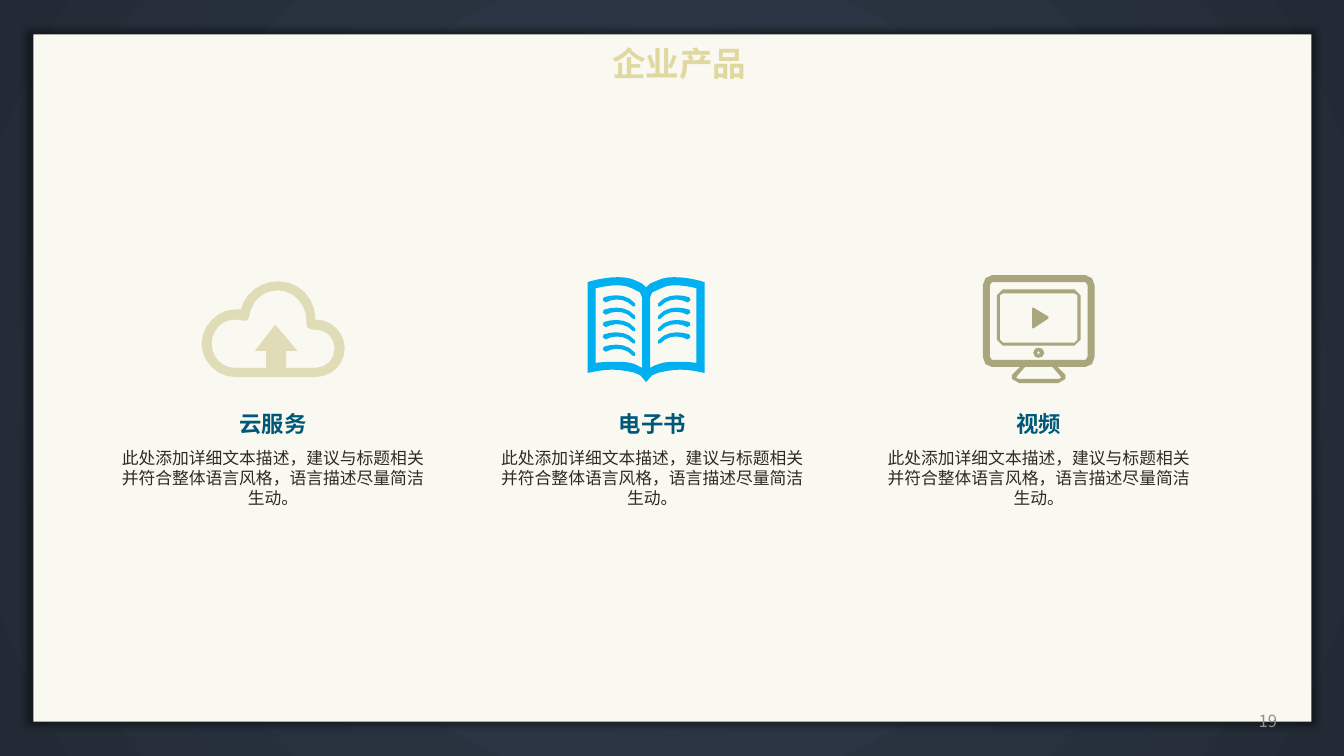
from math import dist
from lxml.etree import SubElement
from pptx import Presentation
from pptx.dml.color import RGBColor
from pptx.enum.shapes import MSO_SHAPE
from pptx.enum.text import MSO_ANCHOR, PP_ALIGN
from pptx.oxml import parse_xml
from pptx.oxml.ns import nsdecls, qn
from pptx.util import Pt

THEME = {
    "font": "Noto Sans CJK SC",
    "panel": "F9F8F1", "heading": "005878", "body": "2F2B20", "number": "8F8F8D",
    "cloud": "DFDCB7", "book": "00B0F0", "monitor": "A9A57C",
    "backdrop": [(0, "333F50"), (100, "222A35")],
    "gold": [(0, "84703F"), (60, "E1D8A0"), (100, "84703F")],
    "title_size": 24, "heading_size": 16, "body_size": 12, "number_size": 12,
}
GRID = 0.72  # points per unit of the icon outlines

prs = Presentation()
prs.slide_width, prs.slide_height = Pt(960), Pt(540)
s = prs.slides.add_slide(prs.slide_layouts[6])


def add_text(text, box, size, color, align=PP_ALIGN.CENTER, bold=False,
             anchor=MSO_ANCHOR.TOP, wrap=True, spacing=None):
    tf = s.shapes.add_textbox(*map(Pt, box)).text_frame
    tf.word_wrap, tf.vertical_anchor = wrap, anchor
    p = tf.paragraphs[0]
    p.alignment = align
    if spacing:
        p.line_spacing = Pt(spacing)
    r = p.add_run()
    r.text = text
    r.font.name, r.font.size, r.font.bold = THEME["font"], Pt(size), bold
    if color:
        r.font.color.rgb = RGBColor.from_string(color)
    else:
        r.font.fill.gradient()
    SubElement(r.font._element, qn("a:ea"), typeface=THEME["font"])


def add_outline(contours, color):
    """Each contour starts at a point; pairs are lines, sixes are Bézier curves."""
    builder = None
    for contour in contours:
        points = [contour[0]]
        for step in contour[1:]:
            if len(step) == 2:
                points.append(step)
                continue
            x0, y0 = points[-1]
            x1, y1, x2, y2, x3, y3 = step
            pieces = max(1, min(6, round(dist((x0, y0), (x3, y3)) / 6)))
            for i in range(1, pieces + 1):
                t = i / pieces
                a, b, c, d = (1 - t)**3, 3 * t * (1 - t)**2, 3 * t * t * (1 - t), t**3
                points.append((a * x0 + b * x1 + c * x2 + d * x3,
                               a * y0 + b * y1 + c * y2 + d * y3))
        points = [(Pt(x * GRID), Pt(y * GRID)) for x, y in points]
        if builder is None:
            builder = s.shapes.build_freeform(*points[0], scale=1.0)
        else:
            builder.move_to(*points[0])
        builder.add_line_segments(points[1:], close=True)
    sp = builder.convert_to_shape()
    sp.shadow.inherit = False
    sp.fill.solid()
    sp.fill.fore_color.rgb = RGBColor.from_string(color)
    sp.line.fill.background()


# Backdrop and panel
s.background.fill.gradient()
panel = s.shapes.add_shape(MSO_SHAPE.RECTANGLE, Pt(23.76), Pt(24.48), Pt(912.96), Pt(491.04))
panel.fill.solid()
panel.fill.fore_color.rgb = RGBColor.from_string(THEME["panel"])
panel.line.fill.background()
panel._element.spPr.append(parse_xml(
    f'<a:effectLst {nsdecls("a")}><a:outerShdw blurRad="{Pt(5)}" sx="101000" sy="101000" '
    'algn="ctr" rotWithShape="0"><a:srgbClr val="000000"><a:alpha val="40000"/>'
    '</a:srgbClr></a:outerShdw></a:effectLst>'))

# Title and slide number
add_text("企业产品", (34.56, 27.36, 901.44, 36), THEME["title_size"], None,
         bold=True, anchor=MSO_ANCHOR.MIDDLE)
add_text("19", (882, 500.4, 37.44, 28.8), THEME["number_size"], THEME["number"],
         align=PP_ALIGN.RIGHT, anchor=MSO_ANCHOR.MIDDLE)

# Gradients of the backdrop and the title
RADIAL = '<a:path {} path="circle"><a:fillToRect l="50000" t="50000" r="50000" b="50000"/></a:path>'
LINEAR = '<a:lin {} ang="3600000" scaled="0"/>'
gradients = list(s.element.iter(qn("a:gradFill")))
for grad, stops, shade in zip(gradients, (THEME["backdrop"], THEME["gold"]), (RADIAL, LINEAR)):
    for child in list(grad):
        grad.remove(child)
    stop_list = SubElement(grad, qn("a:gsLst"))
    for position, color in stops:
        stop = SubElement(stop_list, qn("a:gs"), pos=str(position * 1000))
        SubElement(stop, qn("a:srgbClr"), val=color)
    grad.append(parse_xml(shade.format(nsdecls("a"))))

# Product headings and descriptions
DESCRIPTION = "此处添加详细文本描述，建议与标题相关并符合整体语言风格，语言描述尽量简洁生动。"
for heading, center, width in (("云服务", 195, 63.36), ("电子书", 466, 63.36), ("视频", 742, 46.8)):
    add_text(heading, (center - width / 2, 289.44, width, 26.64), THEME["heading_size"],
             THEME["heading"], bold=True, wrap=False, spacing=19)
    add_text(DESCRIPTION, (center - 119.88, 316.08, 239.76, 51.12), THEME["body_size"],
             THEME["body"], spacing=14.3)

# Cloud icon with upload arrow
add_outline([
    [(313, 317), (313, 296, 297, 279, 276, 279), (258, 279, 243, 291, 239, 307), (233, 307),
     (216, 307, 200, 323, 200, 341), (200, 359, 216, 374, 233, 374), (313, 374),
     (329, 374, 342, 361, 342, 346), (342, 330, 329, 317, 313, 317)],
    [(313, 365), (284, 365), (284, 348), (295, 348), (273, 322), (253, 348), (264, 348),
     (264, 365), (233, 365), (220, 365, 210, 354, 210, 341), (210, 328, 220, 317, 233, 317),
     (242, 318), (245, 318), (247, 315), (249, 299, 260, 288, 276, 288),
     (291, 288, 304, 302, 304, 317), (304, 322), (305, 325), (306, 327, 307, 328, 310, 327),
     (313, 327), (324, 327, 332, 335, 332, 346), (332, 356, 324, 365, 313, 365)],
], THEME["cloud"])

# Book icon: cover with two pages
add_outline([
    [(696, 279), (696, 279, 683, 275, 669, 275), (663, 275, 657, 276, 653, 278),
     (647, 280, 643, 282, 641, 285), (639, 282, 635, 280, 630, 278),
     (626, 276, 619, 275, 613, 275), (600, 275, 586, 279, 586, 279), (583, 280), (583, 370),
     (588, 369), (603, 366, 612, 366, 626, 369), (626, 369, 637, 370, 641, 379),
     (645, 370, 657, 369, 657, 369), (670, 366, 680, 366, 694, 369), (699, 370), (699, 280)],
    [(637, 365), (634, 363, 632, 362, 629, 361), (624, 359, 616, 359, 611, 359),
     (605, 359, 599, 359, 591, 360), (591, 286), (596, 285, 604, 283, 613, 283),
     (618, 283, 624, 284, 627, 286), (635, 288, 637, 292, 637, 295)],
    [(691, 360), (684, 359, 678, 359, 671, 359), (666, 359, 659, 359, 654, 361),
     (651, 362, 648, 363, 645, 365), (645, 295), (645, 292, 647, 288, 656, 286),
     (659, 284, 664, 283, 669, 283), (678, 283, 687, 285, 691, 286)],
], THEME["book"])

# Book icon: five text lines on the left, four mirrored on the right
TEXT_LINE = [(599, 295), (598, 298), (601, 300), (608, 296, 620, 295, 628, 304),
             (630, 304), (630, 301), (622, 291, 608, 292, 599, 295)]
for mirrored, count in ((False, 5), (True, 4)):
    for row in range(count):
        line = [tuple(v + row * 12.25 if i % 2 else 1283 - v if mirrored else v
                      for i, v in enumerate(step)) for step in TEXT_LINE]
        add_outline([line], THEME["book"])

# Monitor icon: case and stand
add_outline([
    [(1077, 273), (984, 273), (979, 273, 975, 278, 975, 283), (975, 354),
     (975, 360, 979, 364, 984, 364), (1012, 364), (1007, 369), (1004, 372), (1004, 376),
     (1005, 378, 1007, 380, 1011, 380), (1050, 380), (1054, 380, 1056, 378, 1057, 376),
     (1057, 372), (1054, 369), (1049, 364), (1077, 364), (1082, 364, 1086, 360, 1086, 354),
     (1086, 283), (1086, 278, 1082, 273, 1077, 273)],
    [(1051, 372), (1053, 375), (1050, 376), (1011, 376), (1008, 375), (1010, 372),
     (1017, 364), (1044, 364)],
    [(1079, 354), (1077, 357), (984, 357), (982, 354), (982, 283), (984, 280),
     (1077, 280), (1079, 283)],
], THEME["monitor"])

# Monitor icon: screen, button and play mark
add_outline([
    [(1066, 287), (995, 287), (991, 287, 989, 290, 989, 293), (989, 337),
     (989, 340, 991, 343, 995, 343), (1066, 343), (1070, 343, 1072, 340, 1072, 337),
     (1072, 293), (1072, 290, 1070, 287, 1066, 287)],
    [(1069, 337), (1066, 340), (995, 340), (992, 337), (992, 293), (995, 291),
     (1066, 291), (1069, 293)],
], THEME["monitor"])
add_outline([
    [(1030, 345), (1027, 346), (1025, 350), (1027, 354), (1030, 355), (1034, 354),
     (1036, 350), (1034, 346)],
    [(1030, 352), (1029, 350), (1030, 348), (1032, 350)],
], THEME["monitor"])
add_outline([[(1025, 305), (1024, 306), (1024, 325), (1025, 326), (1040, 316), (1040, 314)]],
            THEME["monitor"])

prs.save("out.pptx")
